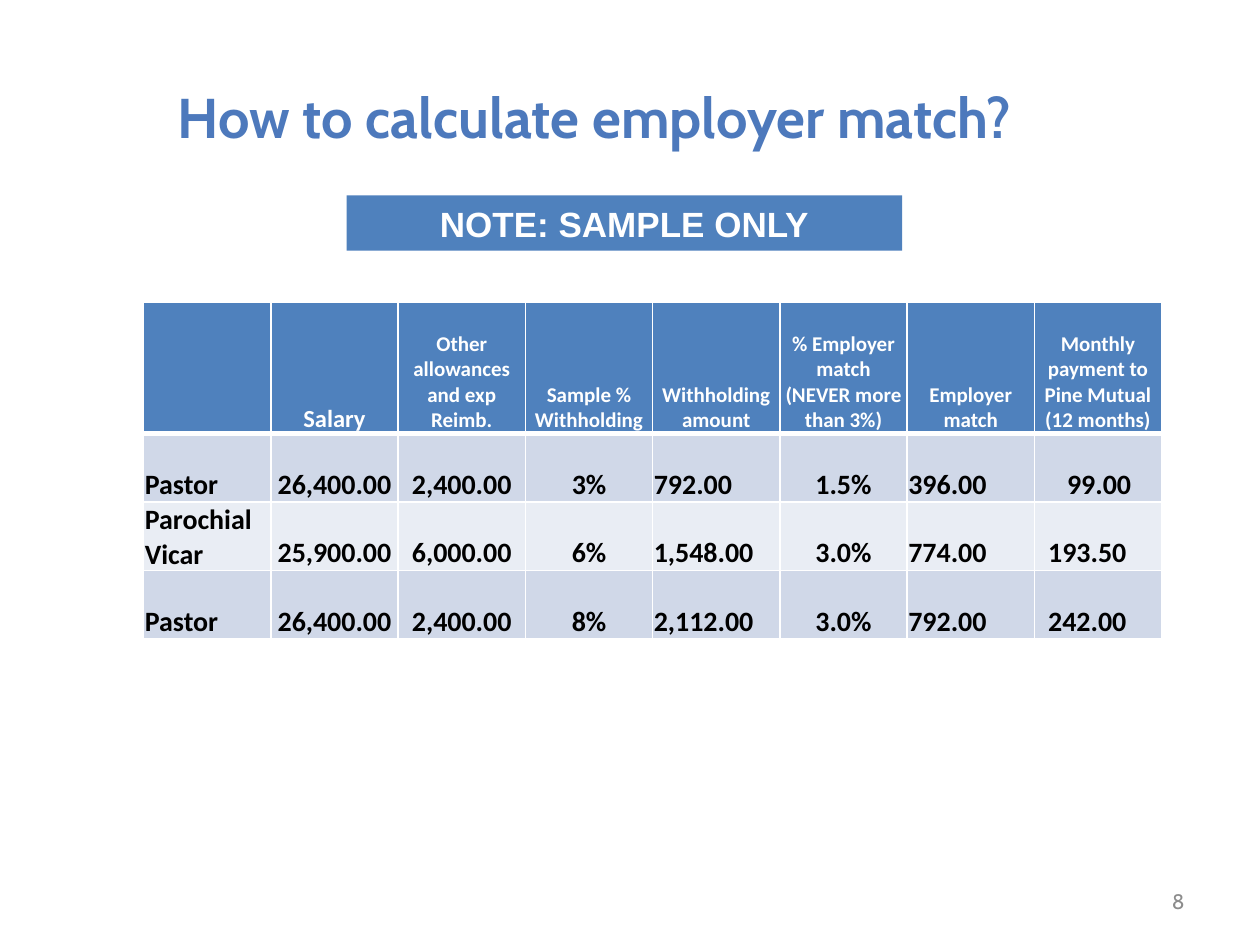
from dataclasses import dataclass

from lxml.etree import SubElement
from pptx import Presentation
from pptx.dml.color import RGBColor
from pptx.enum.shapes import MSO_SHAPE
from pptx.enum.text import MSO_ANCHOR, PP_ALIGN
from pptx.oxml.ns import qn
from pptx.util import Inches, Pt


@dataclass(frozen=True)
class Theme:
    title: str = "4D79BC"
    accent: str = "4F81BD"
    band_dark: str = "D0D8E8"
    band_light: str = "E9EDF4"
    white: str = "FFFFFF"
    black: str = "000000"
    grey: str = "8C8C8C"
    head_font: str = "Cabin"
    note_font: str = "Arial"
    table_font: str = "Calibri"
    title_size: int = 32
    note_size: int = 20
    body_size: int = 16
    lead_size: int = 14
    small_size: int = 12


T = Theme()
GRID_COLS, GRID_ROWS = 100, 75
LEFT, CENTER, RIGHT = PP_ALIGN.LEFT, PP_ALIGN.CENTER, PP_ALIGN.RIGHT

HEADERS = [
    "",
    "Salary",
    "Other allowances and exp Reimb.",
    "Sample % Withholding",
    "Withholding amount",
    "% Employer match\n(NEVER more than 3%)",
    "Employer match",
    "Monthly payment to Pine Mutual (12 months)",
]
ROWS = [
    ["Pastor", "26,400.00", "2,400.00", "3%", "792.00", "1.5%", "396.00", "99.00"],
    ["Parochial Vicar", "25,900.00", "6,000.00", "6%", "1,548.00", "3.0%", "774.00", "193.50"],
    ["Pastor", "26,400.00", "2,400.00", "8%", "2,112.00", "3.0%", "792.00", "242.00"],
]
ALIGNS = [LEFT, CENTER, CENTER, CENTER, LEFT, CENTER, LEFT, LEFT]


def grid_box(prs, col, row, cols, rows):
    cw, rh = prs.slide_width / GRID_COLS, prs.slide_height / GRID_ROWS
    return int(col * cw), int(row * rh), int(cols * cw), int(rows * rh)


def write(tf, text, *, font, size, color, bold=False, align=LEFT, anchor=None):
    tf.word_wrap = True
    if anchor is not None:
        tf.vertical_anchor = anchor
    for i, line in enumerate(text.split("\n")):
        p = tf.paragraphs[0] if i == 0 else tf.add_paragraph()
        p.alignment = align
        r = p.add_run()
        r.text = line
        r.font.name = font
        r.font.size = Pt(size)
        r.font.bold = bold
        r.font.color.rgb = RGBColor.from_string(color)


def add_text(s, box, text, **fmt):
    write(s.shapes.add_textbox(*box).text_frame, text, anchor=MSO_ANCHOR.MIDDLE, **fmt)


def add_note(s, box, text):
    sp = s.shapes.add_shape(MSO_SHAPE.RECTANGLE, *box)
    sp.shadow.inherit = False
    sp.fill.solid()
    sp.fill.fore_color.rgb = RGBColor.from_string(T.accent)
    sp.line.fill.background()
    write(sp.text_frame, text, font=T.note_font, size=T.note_size, color=T.white,
          bold=True, align=CENTER, anchor=MSO_ANCHOR.MIDDLE)


def style_cell(cell, fill, top=1, bottom=1):
    cell.margin_left = cell.margin_right = cell.margin_top = Inches(0.01)
    cell.margin_bottom = 0
    cell.vertical_anchor = MSO_ANCHOR.BOTTOM
    tcPr = cell._tc.get_or_add_tcPr()
    for side, width in (("L", 1), ("R", 1), ("T", top), ("B", bottom)):
        ln = SubElement(tcPr, qn(f"a:ln{side}"), w=str(Pt(width)))
        SubElement(SubElement(ln, qn("a:solidFill")), qn("a:srgbClr"), val=T.white)
    cell.fill.solid()
    cell.fill.fore_color.rgb = RGBColor.from_string(fill)


def add_match_table(s, box, header_share=0.39):
    left, top, width, height = box
    tbl = s.shapes.add_table(len(ROWS) + 1, len(HEADERS), *box).table
    for col in tbl.columns:
        col.width = width // len(HEADERS)
    header_height = int(height * header_share)
    for i, row in enumerate(tbl.rows):
        row.height = header_height if i == 0 else (height - header_height) // len(ROWS)

    for j, text in enumerate(HEADERS):
        cell = tbl.cell(0, j)
        style_cell(cell, T.accent, bottom=3)
        if text:
            write(cell.text_frame, text, font=T.table_font, color=T.white, bold=True,
                  size=T.lead_size if text == "Salary" else T.small_size, align=CENTER)

    for i, values in enumerate(ROWS, 1):
        for j, text in enumerate(values):
            cell = tbl.cell(i, j)
            style_cell(cell, T.band_dark if i % 2 else T.band_light, top=3 if i == 1 else 1)
            if j == len(HEADERS) - 1:
                cell.margin_left = Inches(0.26 if len(text) == 5 else 0.11)
            write(cell.text_frame, text, font=T.table_font, size=T.body_size,
                  color=T.black, bold=True, align=ALIGNS[j])


def main():
    prs = Presentation()
    prs.slide_width, prs.slide_height = Inches(10), Inches(7.5)
    s = prs.slides.add_slide(prs.slide_layouts[6])
    add_text(s, grid_box(prs, 13.1, 3, 81.9, 12.5), "How to calculate employer match?",
             font=T.head_font, size=T.title_size, color=T.title, bold=True)
    add_match_table(s, grid_box(prs, 11.4, 24, 80.8, 26.7))
    add_text(s, grid_box(prs, 71.7, 69.5, 23.3, 4), "8",
             font=T.head_font, size=T.small_size, color=T.grey, align=RIGHT)
    add_note(s, grid_box(prs, 27.5, 15.5, 44.1, 4.4), "NOTE: SAMPLE ONLY")
    prs.save("out.pptx")


if __name__ == "__main__":
    main()
